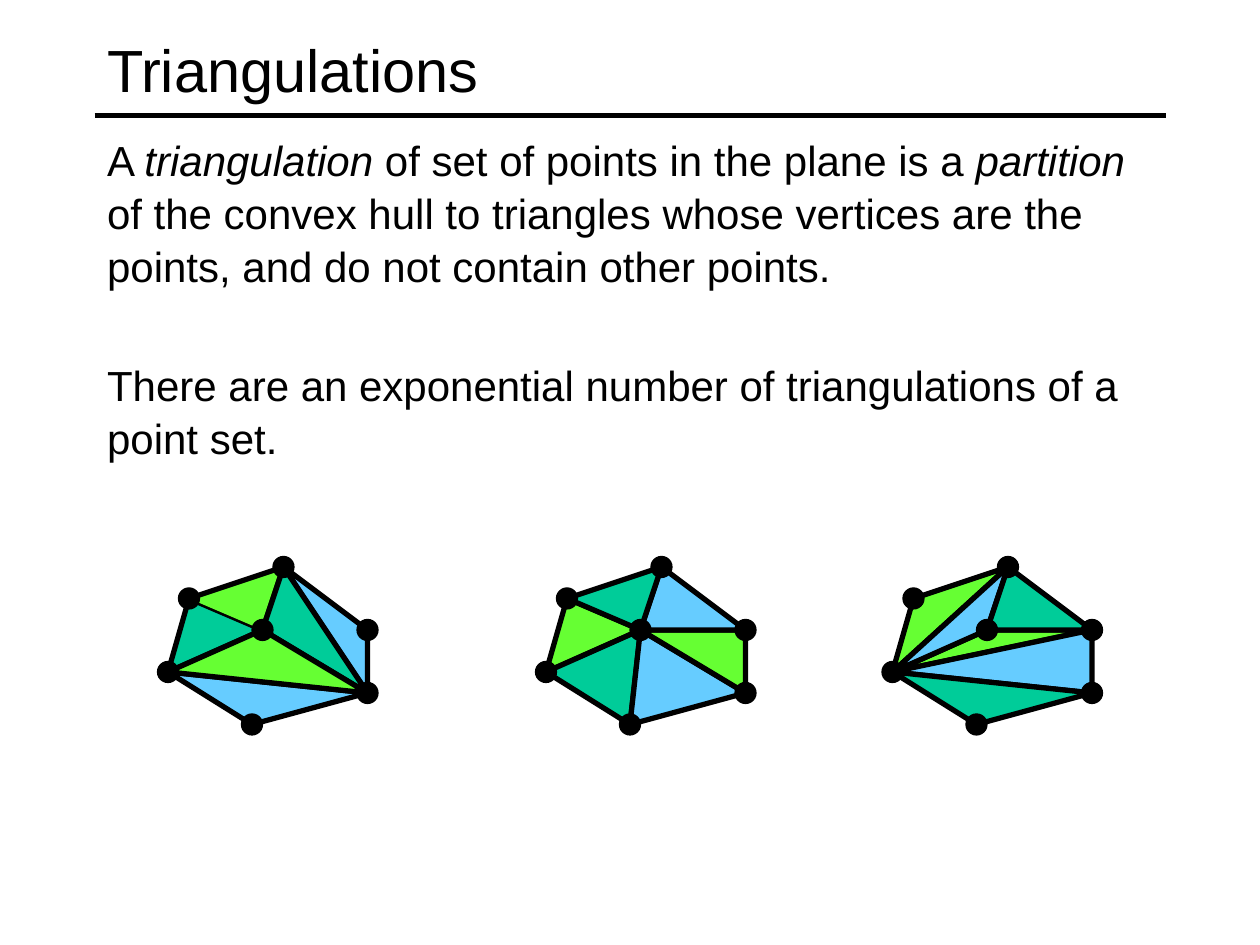
from dataclasses import dataclass

from lxml.etree import SubElement
from pptx import Presentation
from pptx.dml.color import RGBColor as Color
from pptx.enum.shapes import MSO_CONNECTOR as Connector, MSO_SHAPE as Preset
from pptx.enum.text import MSO_ANCHOR as Anchor, MSO_AUTO_SIZE as AutoSize, PP_ALIGN as Align
from pptx.oxml.ns import qn
from pptx.util import Pt

PX = 9525  # EMU per px, 96 px to the inch


@dataclass(frozen=True)
class Theme:
    font: str = "Arial"
    ink: Color = Color(0x00, 0x00, 0x00)
    blue: Color = Color(0x66, 0xCC, 0xFF)
    teal: Color = Color(0x00, 0xCC, 0x99)
    green: Color = Color(0x66, 0xFF, 0x33)
    title_size: int = 34
    body_size: int = 24
    edge_width: float = 3
    dot_line_width: float = 0.75


THEME = Theme()
DOT_SIZE = 16

# The point set, relative to the top left of a figure
POINTS = {
    "top": (96, 8),
    "inner": (80, 56),
    "upper_left": (24, 32),
    "right": (160, 56),
    "left": (8, 88),
    "bottom": (72, 128),
    "lower_right": (160, 104),
}

# Each triangulation: triangles as (colour, corners, closed outline)
FIRST = [
    (THEME.blue, "top right lower_right", True),
    (THEME.blue, "lower_right bottom left", True),
    (THEME.teal, "left upper_left inner", True),
    (THEME.green, "upper_left top inner", False),
    (THEME.teal, "inner top lower_right", True),
    (THEME.green, "left inner lower_right", True),
]
SECOND = [
    (THEME.green, "upper_left inner left", True),
    (THEME.teal, "left inner bottom", True),
    (THEME.blue, "bottom inner lower_right", True),
    (THEME.green, "lower_right inner right", True),
    (THEME.blue, "right inner top", True),
    (THEME.teal, "top inner upper_left", True),
]
THIRD = [
    (THEME.green, "left inner right", True),
    (THEME.blue, "left lower_right right", True),
    (THEME.teal, "left lower_right bottom", True),
    (THEME.green, "left upper_left top", True),
    (THEME.blue, "left top inner", True),
    (THEME.teal, "top inner right", True),
]


def place(shape, box):
    shape.left, shape.top, shape.width, shape.height = (value * PX for value in box)


def add_text(paragraph, text, size, italic=False):
    run = paragraph.add_run()
    run.text = text
    run.font.name = THEME.font
    run.font.size = Pt(size)
    run.font.italic = italic
    run.font.color.rgb = THEME.ink


def paint(shape, fill, line_width):
    shape.shadow.inherit = False
    shape.fill.solid()
    shape.fill.fore_color.rgb = fill
    shape.line.color.rgb = THEME.ink
    shape.line.width = Pt(line_width)


def build_title(slide, box, text):
    title = slide.shapes.title
    place(title, box)
    title.text_frame.vertical_anchor = Anchor.MIDDLE
    paragraph = title.text_frame.paragraphs[0]
    paragraph.alignment = Align.LEFT
    add_text(paragraph, text, THEME.title_size)

    # Rule under the title
    left, top, width, height = box
    y = (top + height - 8) * PX
    rule = slide.shapes.add_connector(
        Connector.STRAIGHT, left * PX, y, (left + width) * PX, y)
    rule.line.color.rgb = THEME.ink
    rule.line.width = Pt(THEME.edge_width)
    SubElement(rule.line._get_or_add_ln().getparent(), qn("a:effectLst"))


def build_body(slide, box, paragraphs):
    body = slide.placeholders[1]
    place(body, box)
    frame = body.text_frame
    frame.auto_size = AutoSize.NONE
    for index, (space_before, runs) in enumerate(paragraphs):
        paragraph = frame.add_paragraph() if index else frame.paragraphs[0]
        paragraph.space_before = Pt(space_before)
        paragraph.line_spacing = 1.05
        # No bullet and no hanging indent
        properties = paragraph._p.get_or_add_pPr()
        properties.set("marL", "0")
        properties.set("indent", "0")
        SubElement(properties, qn("a:buNone"))
        for text, italic in runs:
            add_text(paragraph, text, THEME.body_size, italic=italic)


def build_triangulation(slide, left, top, triangles):
    group = slide.shapes.add_group_shape()
    points = {name: ((left + x) * PX, (top + y) * PX) for name, (x, y) in POINTS.items()}

    # Triangles
    for colour, corners, closed in triangles:
        start, *others = (points[name] for name in corners.split())
        builder = group.shapes.build_freeform(*start, scale=1.0)
        builder.add_line_segments(others, close=closed)
        paint(builder.convert_to_shape(), colour, THEME.edge_width)

    # Vertices
    size = DOT_SIZE * PX
    for x, y in points.values():
        dot = group.shapes.add_shape(Preset.OVAL, x - size // 2, y - size // 2, size, size)
        paint(dot, THEME.ink, THEME.dot_line_width)


def main():
    presentation = Presentation()
    presentation.slide_width = 960 * PX
    presentation.slide_height = 720 * PX
    slide = presentation.slides.add_slide(presentation.slide_layouts[1])

    build_title(slide, (72, 8, 816, 88), "Triangulations")
    build_body(slide, (72, 96, 816, 267), [
        (5, [
            ("A ", False),
            ("triangulation", True),
            (" of set of points in the plane is a ", False),
            ("partition", True),
            (" of the convex hull to triangles whose vertices are the points, "
             "and do not contain other points.", False),
        ]),
        (38, [("There are an exponential number of triangulations of a point set.", False)]),
    ])
    for left, triangles in ((120, FIRST), (408, SECOND), (672, THIRD)):
        build_triangulation(slide, left, 424, triangles)

    presentation.save("out.pptx")


if __name__ == "__main__":
    main()
